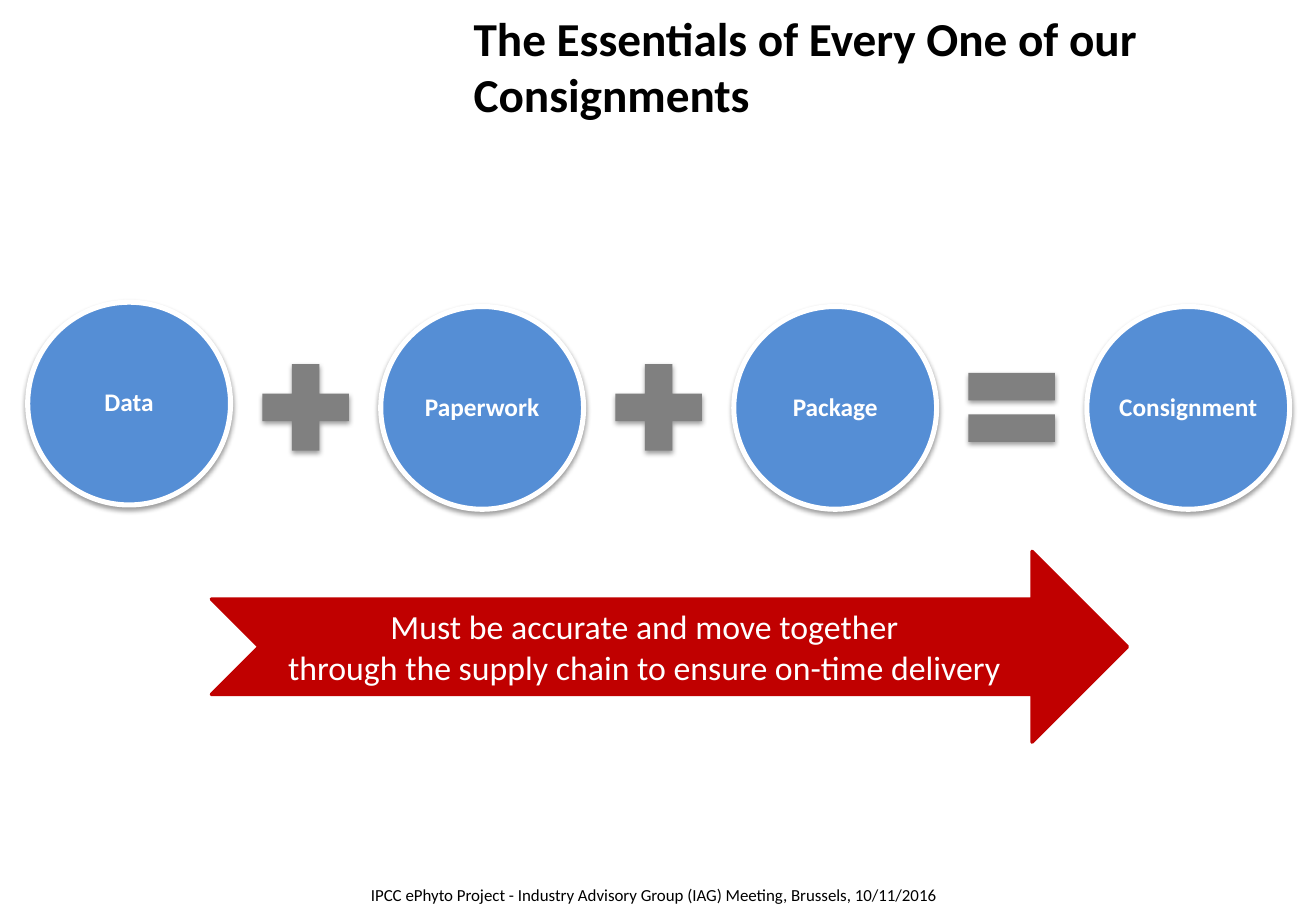
from lxml.etree import SubElement
from pptx import Presentation
from pptx.dml.color import RGBColor
from pptx.enum.shapes import MSO_SHAPE as Shape
from pptx.enum.text import MSO_ANCHOR as Anchor, PP_ALIGN as Align
from pptx.oxml.ns import qn
from pptx.util import Cm, Pt

TITLE = "The Essentials of Every One of our Consignments"
PARTS = [("Data", 6.32), ("Paperwork", 6.41), ("Package", 6.41), ("Consignment", 6.41)]
OPERATORS = [Shape.MATH_PLUS, Shape.MATH_PLUS, Shape.MATH_EQUAL]
MESSAGE = "Must be accurate and move together\vthrough the supply chain to ensure on-time delivery"
FOOTER = "IPCC ePhyto Project - Industry Advisory Group (IAG) Meeting, Brussels, 10/11/2016"

BLUE, GREY, RED, WHITE, BLACK = "558ED5", "808080", "C00000", "FFFFFF", "000000"
LEFT, STEP, DIAMETER = 0.58, 7.38, 4.24
OPERATOR_SIZE, OPERATOR_TOP = 2.46, 7.29
OPERATOR_LEFT = LEFT + DIAMETER + (STEP - DIAMETER - OPERATOR_SIZE) / 2


def color(value):
    return RGBColor.from_string(value)


def write(holder, words, size, ink, bold=False, align=Align.CENTER, inset=(0.25, 0.13, 0.25, 0.13)):
    frame = holder.text_frame
    frame.text = words
    frame.word_wrap = True
    frame.vertical_anchor = Anchor.MIDDLE
    frame.margin_left, frame.margin_top, frame.margin_right, frame.margin_bottom = map(Cm, inset)
    paragraph = frame.paragraphs[0]
    paragraph.alignment = align
    font = paragraph.font
    font.name, font.size, font.bold = "Calibri", Pt(size), bold
    font.color.rgb = color(ink)
    return paragraph


def draw(kind, left, top, width, height, fill, line=None, line_width=0):
    drawn = slide.shapes.add_shape(kind, Cm(left), Cm(top), Cm(width), Cm(height))
    drawn.shadow.inherit = False
    drawn.fill.solid()
    drawn.fill.fore_color.rgb = color(fill)
    if line:
        drawn.line.color.rgb = color(line)
        drawn.line.width = Pt(line_width)
    else:
        drawn.line.fill.background()
    return drawn


def cast_shadow(drawn):
    effects = drawn.element.spPr.find(qn("a:effectLst"))
    outer = SubElement(effects, qn("a:outerShdw"), blurRad=str(Pt(3.1)), dist=str(Pt(1.6)),
                       dir="5400000", rotWithShape="0")
    tint = SubElement(outer, qn("a:srgbClr"), val=BLACK)
    SubElement(tint, qn("a:alpha"), val="38000")


deck = Presentation()
deck.slide_width, deck.slide_height = Cm(27.51), Cm(19.05)
slide = deck.slides.add_slide(deck.slide_layouts[5])

title = slide.shapes.title
title.left, title.top, title.width, title.height = Cm(9.65), Cm(0.05), Cm(17.02), Cm(2.64)
write(title, TITLE, 28, BLACK, bold=True, align=Align.LEFT)

for index, (part, top) in enumerate(PARTS):
    circle = draw(Shape.OVAL, LEFT + index * STEP, top, DIAMETER, DIAMETER, BLUE, WHITE, 3)
    cast_shadow(circle)
    label = write(circle, part, 15, WHITE, bold=True, inset=(0.05,) * 4)
    label.line_spacing = 0.9

for index, kind in enumerate(OPERATORS):
    operator = draw(kind, OPERATOR_LEFT + index * STEP, OPERATOR_TOP, OPERATOR_SIZE, OPERATOR_SIZE, GREY)
    cast_shadow(operator)

arrow = draw(Shape.NOTCHED_RIGHT_ARROW, 4.42, 11.53, 19.15, 3.99, RED, RED, 2)
write(arrow, MESSAGE, 20, WHITE, inset=(0, 0, 1.04, 0))

footer = slide.shapes.add_textbox(Cm(7.16), Cm(18.36), Cm(13), Cm(0.69))
write(footer, FOOTER, 10, BLACK)

deck.save("out.pptx")
